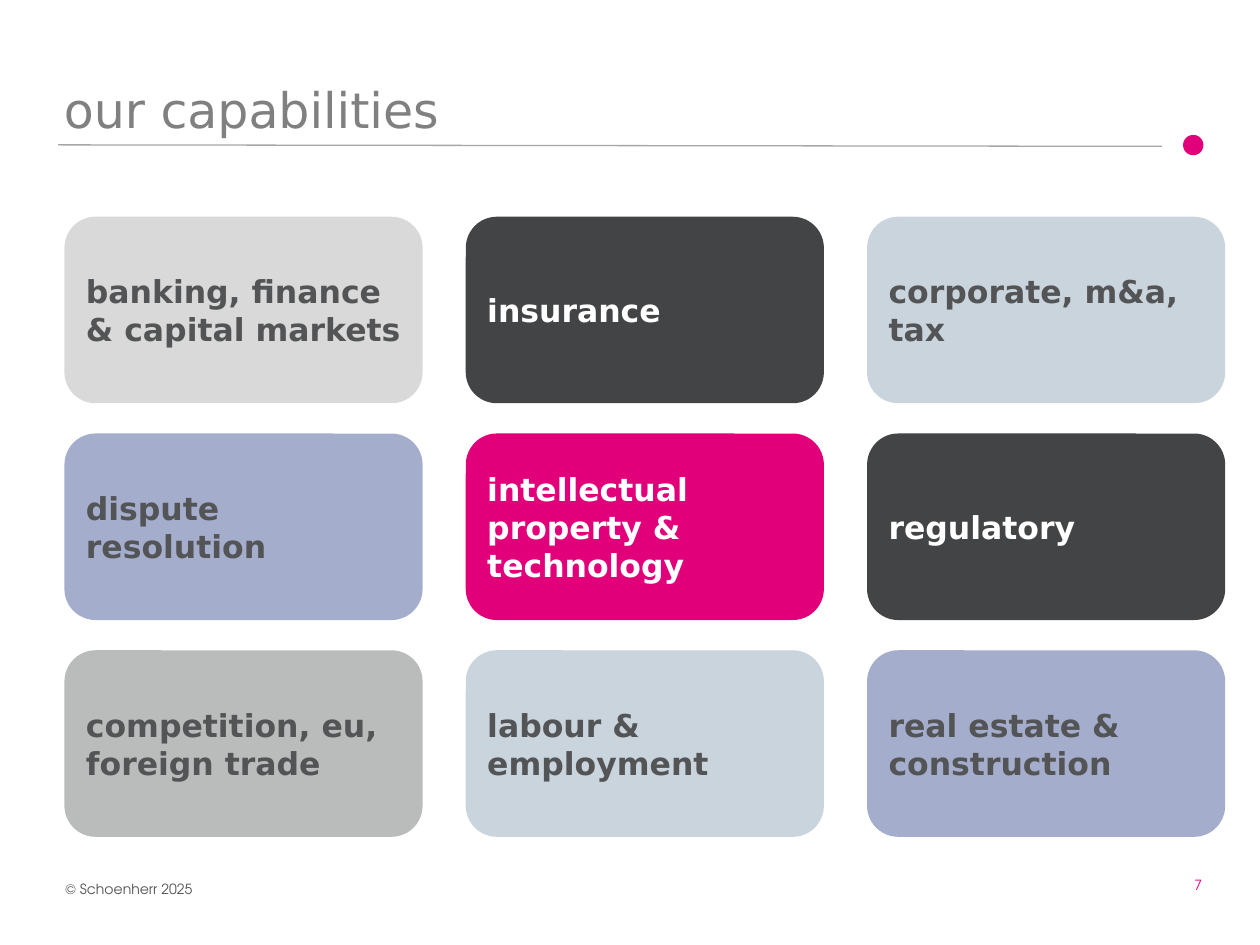
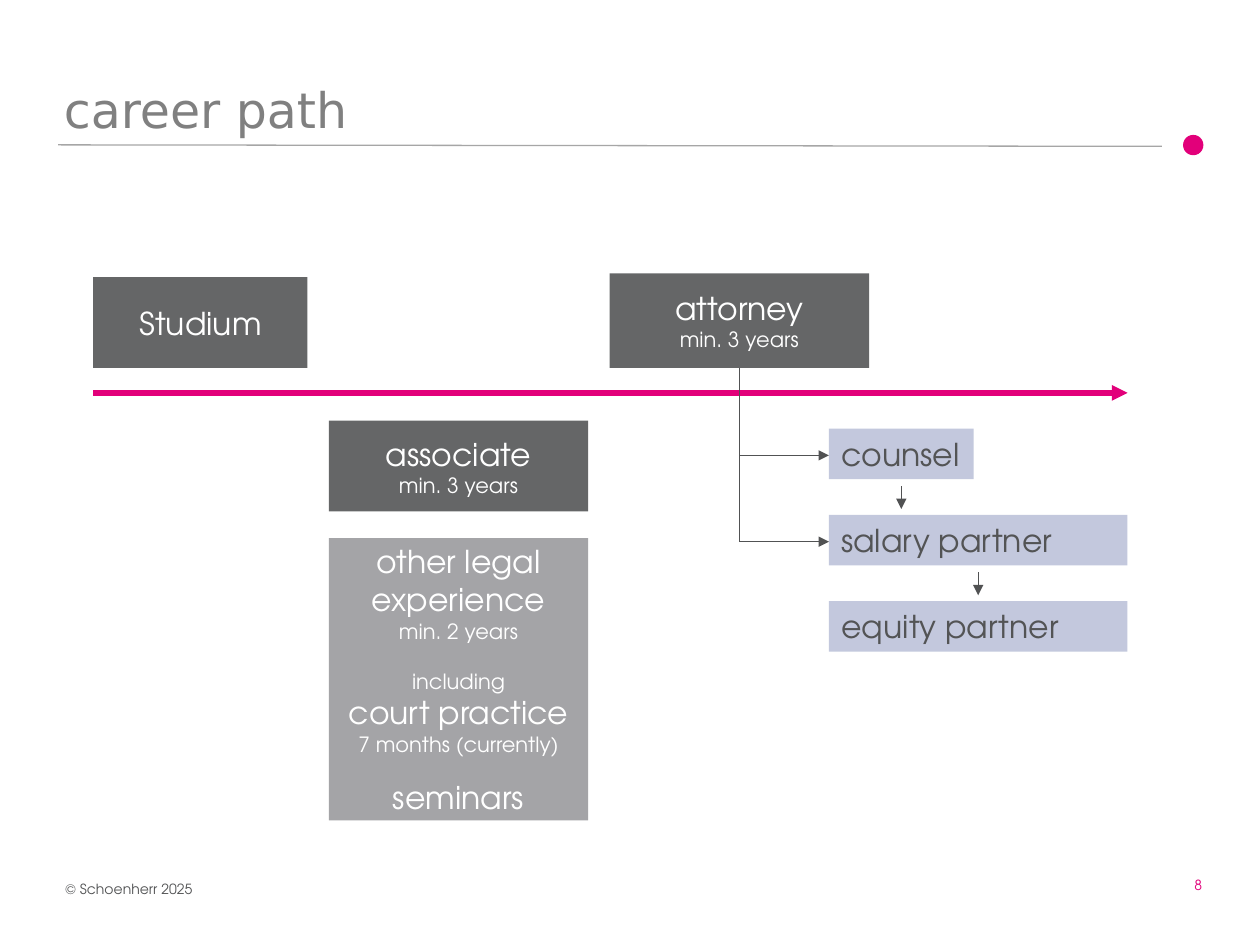
from dataclasses import dataclass
from itertools import pairwise

from lxml import etree
from pptx import Presentation
from pptx.dml.color import RGBColor
from pptx.enum.shapes import MSO_CONNECTOR, MSO_SHAPE
from pptx.enum.text import MSO_ANCHOR, PP_ALIGN
from pptx.oxml.ns import qn
from pptx.util import Cm, Pt

RECT = MSO_SHAPE.RECTANGLE
ROUND = MSO_SHAPE.ROUNDED_RECTANGLE
OVAL = MSO_SHAPE.OVAL
STRAIGHT = MSO_CONNECTOR.STRAIGHT
TOP, MIDDLE, BOTTOM = MSO_ANCHOR.TOP, MSO_ANCHOR.MIDDLE, MSO_ANCHOR.BOTTOM
LEFT, CENTER = PP_ALIGN.LEFT, PP_ALIGN.CENTER


@dataclass(frozen=True)
class Theme:
    pink: str = "E2007A"
    white: str = "FFFFFF"
    ink: str = "535455"
    line: str = "515253"
    rule: str = "A6A6A6"
    title: str = "808080"
    coal: str = "434445"
    slate: str = "656667"
    ash: str = "A4A4A7"
    stone: str = "BABBBB"
    pale: str = "D9D9D9"
    mist: str = "CAD4DD"
    lilac: str = "A5ADCC"
    haze: str = "C3C8DD"
    sans: str = "DejaVu Sans"
    round: str = "TeX Gyre Adventor"
    head: float = 28
    body: float = 18
    note: float = 12
    foot: float = 8


T = Theme()


@dataclass(frozen=True)
class Box:
    """A place on the slide, in centimetres."""
    x: float
    y: float
    w: float
    h: float

    @property
    def mid(self) -> float:
        return self.x + self.w / 2

    @property
    def base(self) -> float:
        return self.y + self.h


@dataclass(frozen=True)
class Line:
    text: str
    size: float = T.body
    gap: float = 0


@dataclass(frozen=True)
class Card:
    text: str
    fill: str
    ink: str = T.ink


@dataclass(frozen=True)
class Step:
    box: Box
    fill: str
    lines: tuple[Line, ...]


# Drawing helpers
def write(shape, *lines: Line, color: str = T.ink, font: str = T.round,
          bold: bool = False, align=LEFT, anchor=TOP, wrap: bool = True) -> None:
    frame = shape.text_frame
    frame.word_wrap = wrap
    frame.vertical_anchor = anchor
    for i, line in enumerate(lines):
        para = frame.add_paragraph() if i else frame.paragraphs[0]
        para.alignment = align
        if line.gap:
            para.space_before = Pt(line.gap)
        run = para.add_run()
        run.text = line.text
        run.font.name = font
        run.font.size = Pt(line.size)
        run.font.bold = bold
        run.font.color.rgb = RGBColor.from_string(color)


def label(slide, box: Box, line: Line, **style) -> None:
    shape = slide.shapes.add_textbox(Cm(box.x), Cm(box.y), Cm(box.w), Cm(box.h))
    write(shape, line, **style)


def block(slide, box: Box, fill: str, kind=RECT):
    shape = slide.shapes.add_shape(kind, Cm(box.x), Cm(box.y), Cm(box.w), Cm(box.h))
    shape.shadow.inherit = False
    shape.fill.solid()
    shape.fill.fore_color.rgb = RGBColor.from_string(fill)
    shape.line.fill.background()
    return shape


def link(slide, x1: float, y1: float, x2: float, y2: float, color: str = T.line,
         width: float = 0.75, arrow: bool = True) -> None:
    wire = slide.shapes.add_connector(STRAIGHT, Cm(x1), Cm(y1), Cm(x2), Cm(y2))
    wire.line.color.rgb = RGBColor.from_string(color)
    wire.line.width = Pt(width)
    props = wire._element.spPr
    if arrow:
        etree.SubElement(props.find(qn("a:ln")), qn("a:tailEnd"), type="triangle")
    etree.SubElement(props, qn("a:effectLst"))


def start(deck, title: str, number: int):
    """Add a slide with the shared title, rule, dot and footer."""
    slide = deck.slides.add_slide(deck.slide_layouts[6])
    label(slide, Box(23.83, 17.55, 0.86, 0.61), Line(str(number), T.foot),
          color=T.pink, wrap=False)
    link(slide, 1.17, 2.92, 23.42, 2.95, T.rule, arrow=False)
    block(slide, Box(23.85, 2.72, 0.41, 0.41), T.pink, OVAL)
    label(slide, Box(1.07, 17.63, 5.59, 0.61), Line("© Schoenherr 2025", T.foot))
    label(slide, Box(1.04, 1.52, 22.5, 1.4), Line(title, T.head),
          color=T.title, font=T.sans, anchor=BOTTOM)
    return slide


# Slide 7: a grid of cards, row by row
CARDS = (
    (Card("banking, finance & capital markets", T.pale),
     Card("insurance", T.coal, T.white),
     Card("corporate, m&a, tax", T.mist)),
    (Card("dispute resolution", T.lilac),
     Card("intellectual property & technology", T.pink, T.white),
     Card("regulatory", T.coal, T.white)),
    (Card("competition, eu, foreign trade", T.stone),
     Card("labour & employment", T.mist),
     Card("real estate & construction", T.lilac)),
)


def skills(deck) -> None:
    slide = start(deck, "our capabilities", 7)
    for r, row in enumerate(CARDS):
        for c, card in enumerate(row):
            box = Box(1.3 + 8.09 * c, 4.37 + 4.37 * r, 7.22, 3.76)
            write(block(slide, box, card.fill, ROUND), Line(card.text),
                  color=card.ink, font=T.sans, bold=True, anchor=MIDDLE)


# Slide 8: steps around a time arrow, then the partner track
THREE = Line("min. 3 years", T.note)
LAWYER = Box(12.29, 5.51, 5.23, 1.91)
STEPS = (
    Step(Box(1.88, 5.59, 4.32, 1.83), T.slate, (Line("Studium"),)),
    Step(Box(6.63, 8.48, 5.23, 1.83), T.slate, (Line("associate"), THREE)),
    Step(LAWYER, T.slate, (Line("attorney"), THREE)),
    Step(Box(6.63, 10.85, 5.23, 5.69), T.ash, (
        Line("other legal experience"),
        Line("min. 2 years", T.note),
        Line("including", T.note, gap=14.3),
        Line("court practice"),
        Line("7 months (currently)", T.note),
        Line("seminars", gap=12.5))),
)
RANKS = (("counsel", 2.92), ("salary partner", 6.02), ("equity partner", 6.02))


def career(deck) -> None:
    slide = start(deck, "career path", 8)
    link(slide, 1.88, 7.92, 22.73, 7.92, T.pink, 3)
    for step in STEPS:
        write(block(slide, step.box, step.fill), *step.lines,
              color=T.white, align=CENTER, anchor=MIDDLE)

    boxes = [Box(16.71, 8.64 + 1.74 * i, w, 1.02) for i, (_, w) in enumerate(RANKS)]
    for box, (name, _) in zip(boxes, RANKS):
        write(block(slide, box, T.haze), Line(name))

    # Branches from attorney to the first two ranks
    entries = [box.y + 0.54 for box in boxes[:2]]
    link(slide, LAWYER.mid, LAWYER.base, LAWYER.mid, entries[-1], arrow=False)
    for y in entries:
        link(slide, LAWYER.mid, y, boxes[0].x, y)
    for upper, lower in pairwise(boxes):
        link(slide, upper.mid, upper.base + 0.14, upper.mid, lower.y - 0.12)


def main() -> None:
    deck = Presentation()
    deck.slide_width, deck.slide_height = Cm(25.4), Cm(19.05)
    skills(deck)
    career(deck)
    deck.save("out.pptx")


if __name__ == "__main__":
    main()
